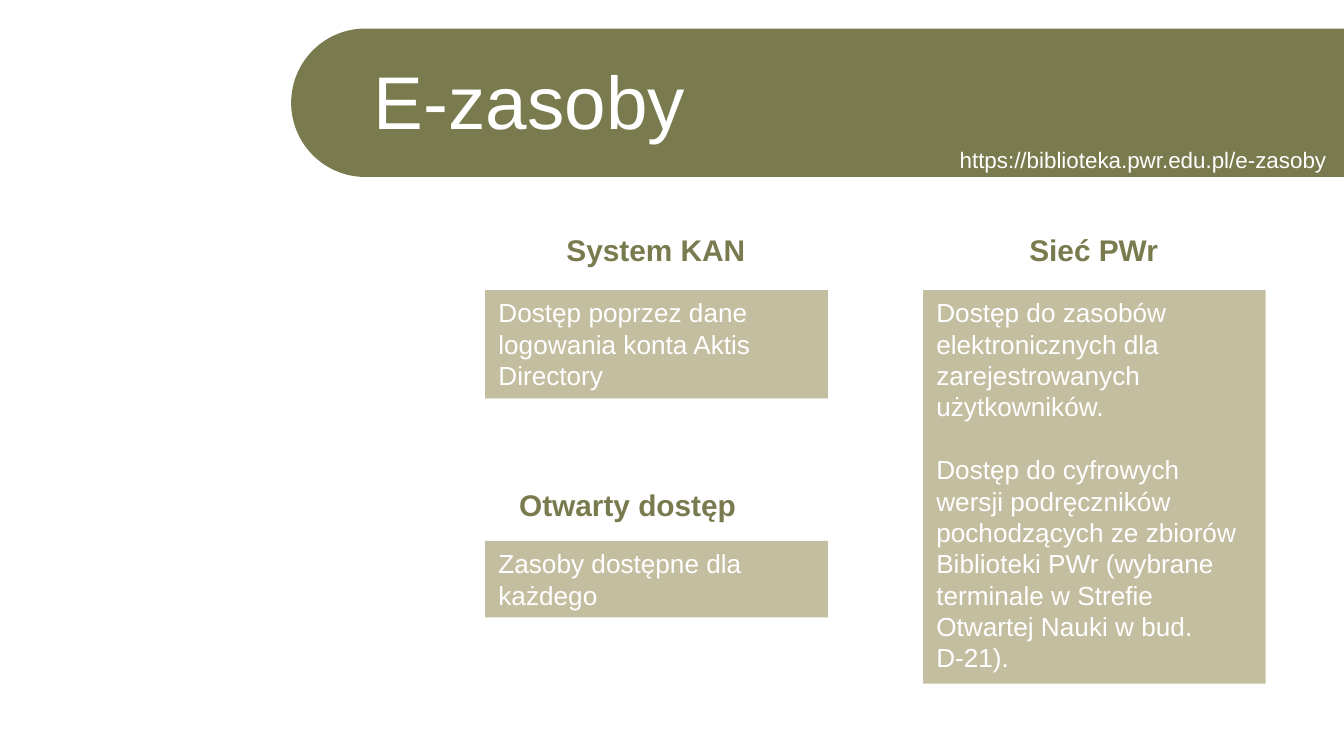
from math import cos, pi, sin

from lxml.etree import SubElement
from pptx import Presentation
from pptx.dml.color import RGBColor
from pptx.enum.shapes import MSO_SHAPE
from pptx.enum.text import MSO_ANCHOR, PP_ALIGN
from pptx.oxml.ns import qn
from pptx.util import Pt

COLORS = {"olive": "797B4F", "sand": "948A54", "white": "FFFFFF"}
FONT = "Arial"
LINE_HEIGHT = 16.8
COLUMN_WIDTH = 183.6
HEADING_WIDTH = 132.5


def fill_shape(shape, color):
    """Give a shape a flat fill without outline or shadow."""
    shape.shadow.inherit = False
    shape.fill.solid()
    shape.fill.fore_color.rgb = RGBColor.from_string(COLORS[color])
    shape.line.fill.background()


def add_run(paragraph, text, size, color, bold=False):
    """Append one formatted run to a paragraph."""
    run = paragraph.add_run()
    run.text = text
    run.font.name = FONT
    run.font.size = Pt(size)
    run.font.bold = bold
    run.font.color.rgb = RGBColor.from_string(COLORS[color])


def add_label(slide, left, top, width, height, text, size, color,
              bold=False, align=PP_ALIGN.LEFT, anchor=MSO_ANCHOR.TOP):
    """Place a one-line text box."""
    frame = slide.shapes.add_textbox(Pt(left), Pt(top), Pt(width), Pt(height)).text_frame
    frame.word_wrap = True
    frame.vertical_anchor = anchor
    if align == PP_ALIGN.LEFT:
        frame.margin_right = 0
    paragraph = frame.paragraphs[0]
    paragraph.alignment = align
    add_run(paragraph, text, size, color, bold)


def add_banner(slide, left, top, width, height, title, address):
    """Draw the title band with its round left end and both texts."""
    radius = height / 2
    steps = 90
    angles = [pi / 2 + pi * step / steps for step in range(steps + 1)]
    arc = [(left + radius * (1 + cos(angle)), top + radius * (1 - sin(angle)))
           for angle in angles]
    right = left + width
    builder = slide.shapes.build_freeform(Pt(right), Pt(top))
    corners = arc + [(right, top + height)]
    builder.add_line_segments([(Pt(x), Pt(y)) for x, y in corners], close=True)
    fill_shape(builder.convert_to_shape(), "olive")
    add_label(slide, left + 37.2, top + 15.6, width - 37.2, 45.4, title, 40, "white",
              anchor=MSO_ANCHOR.MIDDLE)
    add_label(slide, right - 213, top + 59.6, 212.4, 21.6, address, 12, "white")


def add_topic(slide, left, top, height, heading, texts, indent=25.2, rise=34.6):
    """Draw a translucent panel of paragraphs with a heading above it."""
    add_label(slide, left + indent, top - rise, HEADING_WIDTH, 21.6, heading, 16,
              "olive", bold=True, align=PP_ALIGN.CENTER)
    panel = slide.shapes.add_shape(
        MSO_SHAPE.RECTANGLE, Pt(left), Pt(top), Pt(COLUMN_WIDTH), Pt(height))
    fill_shape(panel, "sand")
    color = panel.fill._xPr.find(qn("a:solidFill")).find(qn("a:srgbClr"))
    SubElement(color, qn("a:alpha")).set("val", "55000")

    frame = panel.text_frame
    frame.word_wrap = True
    frame.vertical_anchor = MSO_ANCHOR.TOP
    for index, text in enumerate(texts):
        paragraph = frame.add_paragraph() if index else frame.paragraphs[0]
        paragraph.alignment = PP_ALIGN.LEFT
        paragraph.line_spacing = Pt(LINE_HEIGHT)
        if index:
            paragraph.space_before = Pt(LINE_HEIGHT)
        for number, line in enumerate(text.split("\n")):
            if number:
                paragraph.add_line_break()
            add_run(paragraph, line, 14, "white")


def main():
    """Build and save the slide."""
    presentation = Presentation()
    presentation.slide_width, presentation.slide_height = Pt(720), Pt(405)
    slide = presentation.slides.add_slide(presentation.slide_layouts[6])
    add_banner(slide, 156, 15.3, 564, 79.5, "E-zasoby",
               "https://biblioteka.pwr.edu.pl/e-zasoby")
    add_topic(slide, 259.9, 155.4, 58.1, "System KAN",
              ["Dostęp poprzez dane logowania konta Aktis Directory"])
    add_topic(slide, 494.5, 155.4, 210.8, "Sieć PWr",
              ["Dostęp do zasobów elektronicznych dla zarejestrowanych użytkowników.",
               "Dostęp do cyfrowych wersji podręczników pochodzących ze zbiorów "
               "Biblioteki PWr (wybrane terminale w Strefie Otwartej Nauki w bud.\nD-21)."])
    add_topic(slide, 259.9, 289.8, 41, "Otwarty dostęp",
              ["Zasoby dostępne dla każdego"], indent=10.1, rise=32.6)
    presentation.save("out.pptx")


if __name__ == "__main__":
    main()
